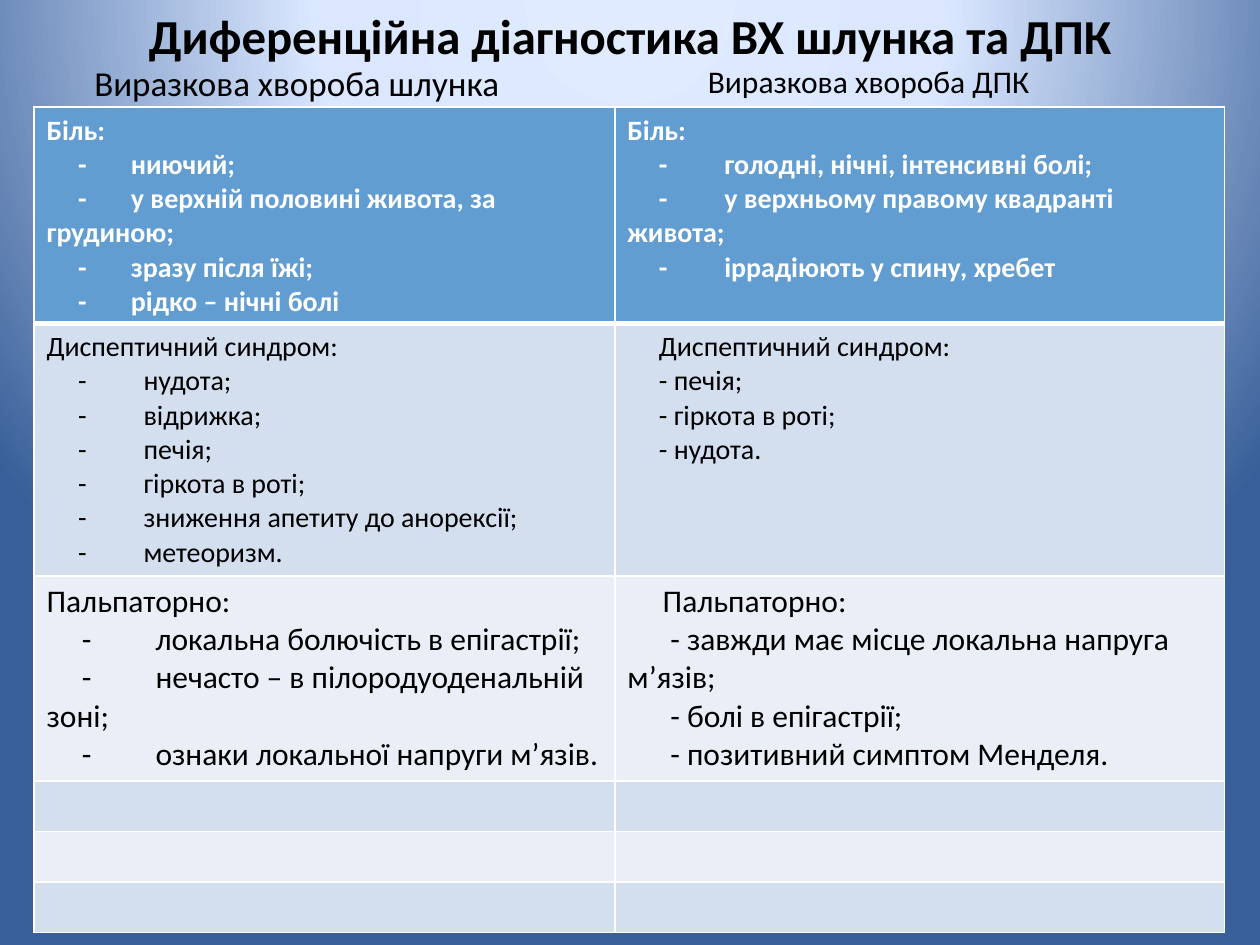
from pptx import Presentation
from pptx.dml.color import RGBColor
from pptx.enum.text import MSO_ANCHOR, PP_ALIGN
from pptx.oxml import parse_xml
from pptx.oxml.ns import nsdecls, qn
from pptx.util import Inches, Pt

FONT = "Calibri"
COLORS = {
    "text": "000000",
    "white": "FFFFFF",
    "header": "629DD1",
    "band_dark": "D3DFEE",
    "band_light": "EAEFF7",
    "glow": "E0EBFF",
    "sky": "DAE7FF",
    "navy": "385F99",
}
COLUMN_WIDTHS = [4.61, 4.84]
ROW_HEIGHTS = [1.72, 2.0, 1.63, 0.4, 0.4, 0.4]
ROW_STYLES = [(16, "white", True), (16, "text", False), (18, "text", False)]


def comparison_cells():
    # Each cell: heading indent, item indent, points after the dash, heading, items
    return [
        [
            (0, 0.25, 21.7, "Бiль:", [
                "ниючий;",
                "у верхнiй половинi живота, за грудиною;",
                "зразу пiсля їжі;",
                "рiдко – нiчнi болi",
            ]),
            (0, 0.25, 28.9, "Бiль:", [
                "голоднi, нiчнi, iнтенсивнi болi;",
                "у верхньому правому квадрантi живота;",
                "iррадiюють у спину, хребет",
            ]),
        ],
        [
            (0, 0.25, 28.9, "Диспептичний синдром:", [
                "нудота;",
                "вiдрижка;",
                "печiя;",
                "гiркота в ротi;",
                "зниження апетиту до анорексiї;",
                "метеоризм.",
            ]),
            (0.25, 0.25, 0, "Диспептичний синдром:", [
                "печiя;",
                "гiркота в ротi;",
                "нудота.",
            ]),
        ],
        [
            (0, 0.28, 32.5, "Пальпаторно:", [
                "локальна болючiсть в епiгастрiї;",
                "нечасто – в пiлородуоденальнiй зонi;",
                "ознаки локальної напруги м’язiв.",
            ]),
            (0.28, 0.34, 0, "Пальпаторно:", [
                "завжди має мiсце локальна напруга м’язiв;",
                "болi в епiгастрiї;",
                "позитивний симптом Менделя.",
            ]),
        ],
    ]


def set_background(slide):
    slide.background.fill.solid()
    bg_pr = slide.background.fill._xPr
    stops = "".join(
        f'<a:gs pos="{pos * 1000}"><a:srgbClr val="{COLORS[name]}"/></a:gs>'
        for pos, name in [(0, "glow"), (40, "sky"), (100, "navy")]
    )
    gradient = parse_xml(
        f'<a:gradFill {nsdecls("a")} rotWithShape="1"><a:gsLst>{stops}</a:gsLst>'
        '<a:path path="circle"><a:fillToRect l="50000" t="-80000" r="50000" b="180000"/>'
        "</a:path></a:gradFill>"
    )
    bg_pr.replace(bg_pr.find(qn("a:solidFill")), gradient)


def write_paragraph(p, parts, size, color="text", bold=False, indent=0):
    p_pr = p._p.get_or_add_pPr()
    p_pr.set("marL", "0")
    p_pr.set("indent", str(Inches(indent)))
    for text, spacing in parts:
        r = p.add_run()
        r.text = text
        r.font.name = FONT
        r.font.size = Pt(size)
        r.font.bold = bold
        r.font.color.rgb = RGBColor.from_string(COLORS[color])
        if spacing:
            r._r.get_or_add_rPr().set("spc", str(round(spacing * 100)))


def add_label(slide, box, text, size, wrap=False, **style):
    tf = slide.shapes.add_textbox(*map(Inches, box)).text_frame
    tf.word_wrap = wrap
    write_paragraph(tf.paragraphs[0], [(text, 0)], size, **style)
    return tf


def set_borders(cell, top, bottom):
    tc_pr = cell._tc.get_or_add_tcPr()
    for index, (side, width) in enumerate([("L", 1), ("R", 1), ("T", top), ("B", bottom)]):
        tc_pr.insert(index, parse_xml(
            f'<a:ln{side} {nsdecls("a")} w="{Pt(width)}"><a:solidFill>'
            f'<a:srgbClr val="{COLORS["white"]}"/></a:solidFill></a:ln{side}>'
        ))


def fill_cell(tf, content, style):
    head_indent, item_indent, gap, heading, items = content
    write_paragraph(tf.paragraphs[0], [(heading, 0)], *style, indent=head_indent)
    for item in items:
        parts = [("-", 0), (" ", gap), (item, 0)] if gap else [("- " + item, 0)]
        write_paragraph(tf.add_paragraph(), parts, *style, indent=item_indent)


def add_comparison_table(slide):
    table = slide.shapes.add_table(
        len(ROW_HEIGHTS), len(COLUMN_WIDTHS), Inches(0.27), Inches(0.85),
        Inches(sum(COLUMN_WIDTHS)), Inches(sum(ROW_HEIGHTS)),
    ).table
    for column, width in zip(table.columns, COLUMN_WIDTHS):
        column.width = Inches(width)
    contents = comparison_cells()
    for i, height in enumerate(ROW_HEIGHTS):
        table.rows[i].height = Inches(height)
        band = "header" if i == 0 else "band_dark" if i % 2 else "band_light"
        for j in range(len(COLUMN_WIDTHS)):
            cell = table.cell(i, j)
            cell.fill.solid()
            cell.fill.fore_color.rgb = RGBColor.from_string(COLORS[band])
            set_borders(cell, top=3 if i == 1 else 1, bottom=3 if i == 0 else 1)
            if i < len(contents):
                fill_cell(cell.text_frame, contents[i][j], ROW_STYLES[i])


def main():
    prs = Presentation()
    prs.slide_width, prs.slide_height = Inches(10), Inches(7.5)
    slide = prs.slides.add_slide(prs.slide_layouts[6])
    set_background(slide)
    title = add_label(slide, (0.5, 0, 9, 0.55), "Диференцiйна дiагностика ВХ шлунка та ДПК",
                      27.9, wrap=True, bold=True)
    title.vertical_anchor = MSO_ANCHOR.MIDDLE
    title.paragraphs[0].alignment = PP_ALIGN.CENTER
    add_comparison_table(slide)
    add_label(slide, (0.59, 0.44, 3.5, 0.44), "Виразкова хвороба шлунка", 20, indent=0.06)
    add_label(slide, (5.24, 0.44, 3.07, 0.4), "Виразкова хвороба ДПК", 18, indent=0.28)
    prs.save("out.pptx")


if __name__ == "__main__":
    main()
